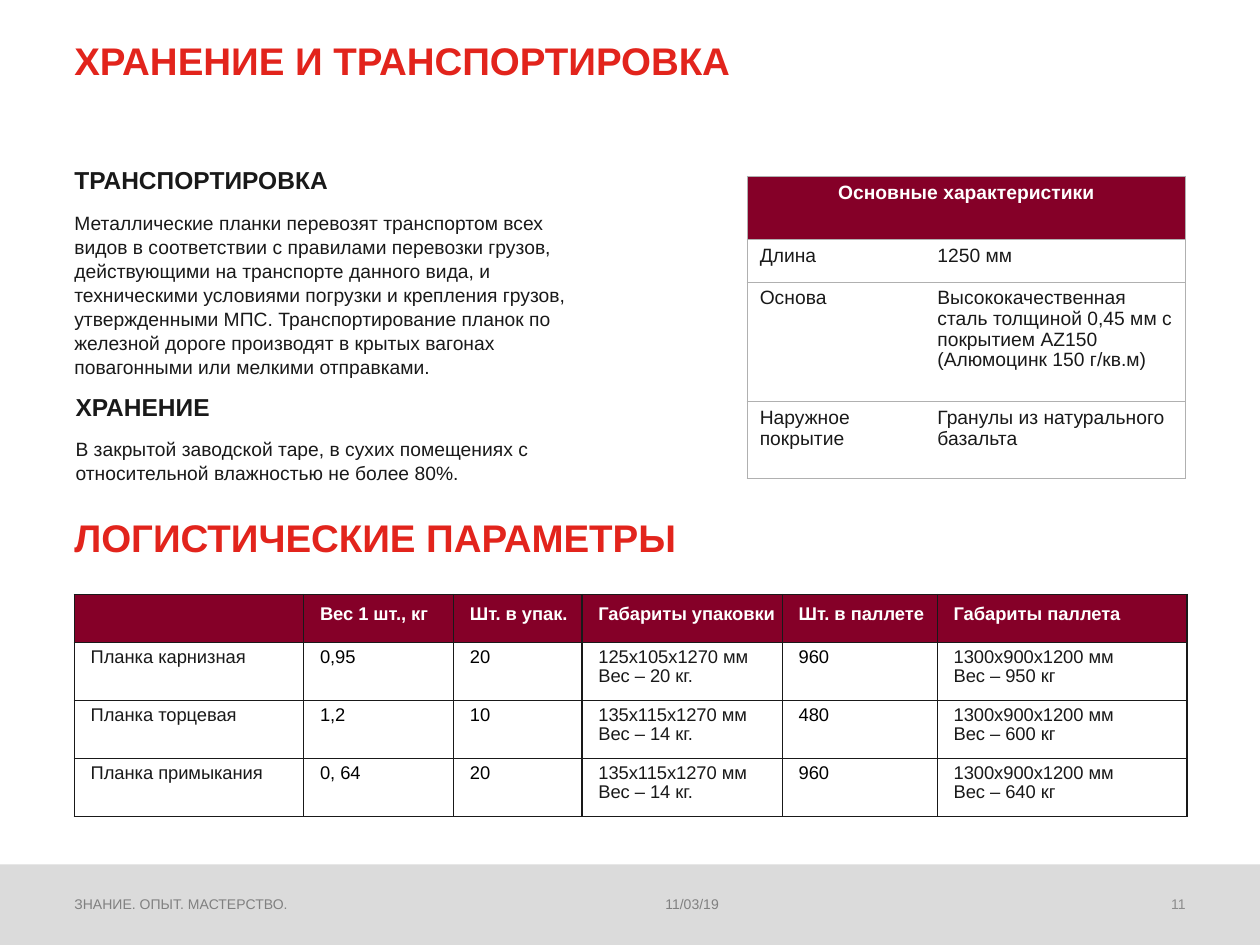
"""Builds the storage, transport and logistics slide."""
from dataclasses import dataclass

import pptx
import pptx.dml.color
import pptx.enum.shapes
import pptx.enum.text
import pptx.oxml
import pptx.oxml.ns
import pptx.util

COLUMNS, ROWS = 100, 75
SLIDE_WIDTH, SLIDE_HEIGHT = pptx.util.Inches(10), pptx.util.Inches(7.5)
RED, MAROON, INK, BLACK, WHITE = "E2241C", "850028", "191919", "000000", "FFFFFF"
GREY, PAGE_GREY, BAR_GREY, RULE_GREY = "808080", "8C8C8C", "DBDBDB", "B0B0B0"
LEFT = pptx.enum.text.PP_ALIGN.LEFT
CENTER = pptx.enum.text.PP_ALIGN.CENTER
RIGHT = pptx.enum.text.PP_ALIGN.RIGHT
TOP = pptx.enum.text.MSO_ANCHOR.TOP
BOTTOM = pptx.enum.text.MSO_ANCHOR.BOTTOM


@dataclass(frozen=True)
class Style:
    """Look of a paragraph."""
    size: float
    color: str
    bold: bool = False
    align: pptx.enum.text.PP_ALIGN = LEFT
    spacing: float = 1.0


@dataclass(frozen=True)
class Block:
    """Text placed on the grid, in a placeholder when an index is given."""
    text: str
    left: float
    top: float
    width: float
    height: float
    style: Style
    placeholder: int | None = None
    anchor: pptx.enum.text.MSO_ANCHOR = TOP


@dataclass(frozen=True)
class Grid:
    """Table placed on the slide grid."""
    left: float
    top: float
    widths: tuple[float, ...]
    heights: tuple[float, ...]


HEADLINE = Style(22, RED, True)
HEADING = Style(14, INK, True)
BODY = Style(11, INK, spacing=1.04)
FOOTER = Style(8, GREY)

BLOCKS = (
    Block("ХРАНЕНИЕ И ТРАНСПОРТИРОВКА", 5.9, 2.9, 68.9, 6.5, HEADLINE, 0),
    Block("ТРАНСПОРТИРОВКА", 5.9, 13.1, 41.3, 3.7, HEADING, 1),
    Block("Металлические планки перевозят транспортом всех видов в соответствии с "
          "правилами перевозки грузов, действующими на транспорте данного вида, и "
          "техническими условиями погрузки и крепления грузов, утвержденными МПС. "
          "Транспортирование планок по железной дороге производят в крытых вагонах "
          "повагонными или мелкими отправками.", 5.9, 16.7, 41.3, 52.3, BODY, 2),
    Block("ХРАНЕНИЕ", 6, 31.1, 41.3, 3.5, HEADING, 3),
    Block("В закрытой заводской таре, в сухих помещениях с относительной влажностью "
          "не более 80%.", 6, 34.6, 41.3, 4.5, BODY, 4),
    Block("ЛОГИСТИЧЕСКИЕ ПАРАМЕТРЫ", 5.9, 40.8, 68.9, 6.5, HEADLINE),
    Block("ЗНАНИЕ. ОПЫТ. МАСТЕРСТВО.", 5.9, 70, 41.5, 2.4, FOOTER, anchor=BOTTOM),
    Block("11/03/19", 52.8, 70, 33.1, 2.4, FOOTER, anchor=BOTTOM),
    Block("11", 88.6, 70, 5.5, 2.4, Style(8, PAGE_GREY, align=RIGHT), anchor=BOTTOM),
)

FEATURES = (
    ("Основные характеристики", ""),
    ("Длина", "1250 мм"),
    ("Основа", "Высококачественная сталь толщиной 0,45 мм с покрытием AZ150 "
               "(Алюмоцинк 150 г/кв.м)"),
    ("Наружное покрытие", "Гранулы из натурального базальта"),
)
LOGISTICS = (
    ("", "Вес 1 шт., кг", "Шт. в упак.", "Габариты упаковки", "Шт. в паллете",
     "Габариты паллета"),
    ("Планка карнизная", "0,95", "20", "125х105х1270 мм\nВес – 20 кг.", "960",
     "1300х900х1200 мм\nВес – 950 кг"),
    ("Планка торцевая", "1,2", "10", "135х115х1270 мм\nВес – 14 кг.", "480",
     "1300х900х1200 мм\nВес – 600 кг"),
    ("Планка примыкания", "0, 64", "20", "135х115х1270 мм\nВес – 14 кг.", "960",
     "1300х900х1200 мм\nВес – 640 кг"),
)
FEATURE_GRID = Grid(59.3, 14, (14.1, 20.7), (5, 3.4, 9.5, 6.1))
LOGISTIC_GRID = Grid(5.9, 47.2, (18.2, 11.9, 10.2, 15.9, 12.3, 19.8), (3.8, 4.6, 4.6, 4.6))
NUMBER_COLUMNS = (1, 2, 4)


def across(columns: float) -> int:
    """Length of a number of grid columns."""
    return round(SLIDE_WIDTH * columns / COLUMNS)


def down(rows: float) -> int:
    """Length of a number of grid rows."""
    return round(SLIDE_HEIGHT * rows / ROWS)


def rgb(color: str) -> pptx.dml.color.RGBColor:
    """Colour object for a hex string."""
    return pptx.dml.color.RGBColor.from_string(color)


def write(frame, text: str, style: Style) -> None:
    """Fill a text frame with unbulleted paragraphs of one style."""
    frame.text = text
    for paragraph in frame.paragraphs:
        properties = paragraph._p.get_or_add_pPr()
        properties.set("marL", "0")
        properties.set("indent", "0")
        paragraph.alignment = style.align
        paragraph.line_spacing = style.spacing
        paragraph.space_before = pptx.util.Pt(0)
        properties.append(pptx.oxml.parse_xml(
            f'<a:buNone {pptx.oxml.ns.nsdecls("a")}/>'))
        font = paragraph.font
        font.name = "Arial"
        font.size = pptx.util.Pt(style.size)
        font.bold = style.bold
        font.color.rgb = rgb(style.color)


def draw_block(slide, block: Block) -> None:
    """Place one text block."""
    place = (across(block.left), down(block.top), across(block.width), down(block.height))
    if block.placeholder is None:
        shape = slide.shapes.add_textbox(*place)
    else:
        shape = slide.placeholders[block.placeholder]
        shape.left, shape.top, shape.width, shape.height = place
    frame = shape.text_frame
    frame.word_wrap = True
    frame.auto_size = pptx.enum.text.MSO_AUTO_SIZE.NONE
    frame.vertical_anchor = block.anchor
    frame.margin_left = frame.margin_right = frame.margin_top = frame.margin_bottom = 0
    write(frame, block.text, block.style)


def set_borders(cell, color: str, width: float, sides: str) -> None:
    """Rule the named sides of a cell and clear the others."""
    for side in "LRTB":
        paint = f'<a:solidFill><a:srgbClr val="{color}"/></a:solidFill>'
        cell._tc.get_or_add_tcPr().append(pptx.oxml.parse_xml(
            f'<a:ln{side} {pptx.oxml.ns.nsdecls("a")} w="{pptx.util.Pt(width)}">'
            f'{paint if side in sides else "<a:noFill/>"}</a:ln{side}>'))


def fill_cell(cell, color: str | None) -> None:
    """Fill a cell, or leave it clear."""
    if color is None:
        cell.fill.background()
    else:
        cell.fill.solid()
        cell.fill.fore_color.rgb = rgb(color)


def add_grid(slide, grid: Grid):
    """Add an unstyled table with the grid's column and row sizes."""
    table = slide.shapes.add_table(
        len(grid.heights), len(grid.widths), across(grid.left), down(grid.top),
        across(sum(grid.widths)), down(sum(grid.heights))).table
    table.first_row = table.horz_banding = False
    for column, width in zip(table.columns, grid.widths):
        column.width = across(width)
    for row, height in zip(table.rows, grid.heights):
        row.height = down(height)
    return table


def draw_logistics(slide) -> None:
    """Draw the fully ruled logistics table."""
    table = add_grid(slide, LOGISTIC_GRID)
    for row, texts in enumerate(LOGISTICS):
        for column, text in enumerate(texts):
            cell = table.cell(row, column)
            color = WHITE if row == 0 else BLACK if column in NUMBER_COLUMNS else INK
            cell.margin_left, cell.margin_right = across(1.3), 0
            cell.margin_top = cell.margin_bottom = down(0.8 if row == 0 else 0.4)
            write(cell.text_frame, text, Style(10.5, color, row == 0, spacing=0.96))
            set_borders(cell, INK, 1, "LRTB")
            fill_cell(cell, MAROON if row == 0 else None)


def draw_features(slide) -> None:
    """Draw the features table, ruled outside and between rows."""
    table = add_grid(slide, FEATURE_GRID)
    table.cell(0, 0).merge(table.cell(0, 1))
    for row, texts in enumerate(FEATURES):
        for column, text in enumerate(texts):
            cell = table.cell(row, column)
            style = Style(11, INK, spacing=0.96)
            if row == 0:
                style = Style(11, WHITE, True, CENTER, 0.96)
            if not cell.is_spanned:
                write(cell.text_frame, text, style)
            set_borders(cell, RULE_GREY, 0.75, "LRTB" if row == 0 else ("LTB", "RTB")[column])
            fill_cell(cell, MAROON if row == 0 else None)


def main() -> None:
    """Build and save the presentation."""
    presentation = pptx.Presentation()
    presentation.slide_width, presentation.slide_height = SLIDE_WIDTH, SLIDE_HEIGHT
    slide = presentation.slides.add_slide(presentation.slide_layouts[4])
    draw_logistics(slide)
    bar = slide.shapes.add_shape(pptx.enum.shapes.MSO_SHAPE.RECTANGLE,
                                 0, down(68.6), across(COLUMNS), down(6.4))
    bar.shadow.inherit = False
    bar.fill.solid()
    bar.fill.fore_color.rgb = rgb(BAR_GREY)
    bar.line.fill.background()
    for block in BLOCKS:
        draw_block(slide, block)
    draw_features(slide)
    presentation.save("out.pptx")


if __name__ == "__main__":
    main()
